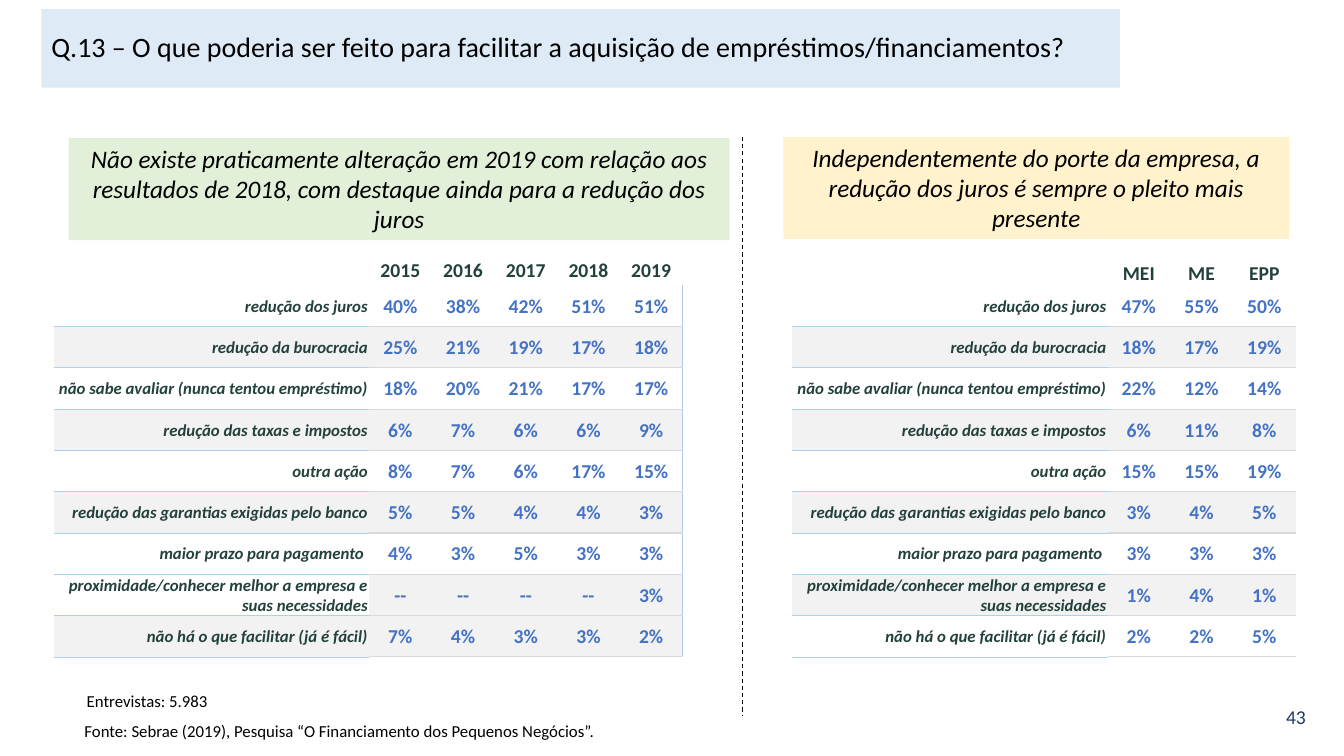
import pptx
import pptx.dml.color
import pptx.enum.dml
import pptx.enum.shapes
import pptx.enum.text
import pptx.oxml
import pptx.oxml.ns
import pptx.util

Cm, Pt = pptx.util.Cm, pptx.util.Pt
ALIGN = pptx.enum.text.PP_ALIGN
ANCHOR = pptx.enum.text.MSO_ANCHOR
AUTO_SIZE = pptx.enum.text.MSO_AUTO_SIZE

NO_GRID_STYLE = "{2D5ABB26-0587-4C30-8999-92F81FD0307C}"
BLUE_RULE, GREY_RULE, EDGE_RULE = ("A8D2F2", 0.75), ("D9D9D9", 1), ("B4C7E7", 0.75)
# Row fills: "." none, "G" grey, "W" white
FILLS = {".": None, "G": "F2F2F2", "W": "FFFFFF"}

TABLE_TOP, HEADER_HEIGHT, ROW_HEIGHT = 7.19, 1.55, 1.04
LABEL_WIDTH, VALUE_WIDTH = 7.95, 1.58

LABEL_FONT = {"size": Pt(12), "bold": True, "italic": True}
VALUE_FONT = {"size": Pt(14), "bold": True}
CALLOUT_FONT = {"size": Pt(18), "italic": True}
NOTE_FONT = {"size": Pt(12)}

ACTIONS = [
    "redução dos juros",
    "redução da burocracia",
    "não sabe avaliar (nunca tentou empréstimo)",
    "redução das taxas e impostos",
    "outra ação",
    "redução das garantias exigidas pelo banco",
    "maior prazo para pagamento ",
    "proximidade/conhecer melhor a empresa e suas necessidades",
    "não há o que facilitar (já é fácil)",
]
YEARS = ["2015", "2016", "2017", "2018", "2019"]
YEAR_VALUES = [
    ["40%", "38%", "42%", "51%", "51%"],
    ["25%", "21%", "19%", "17%", "18%"],
    ["18%", "20%", "21%", "17%", "17%"],
    ["6%", "7%", "6%", "6%", "9%"],
    ["8%", "7%", "6%", "17%", "15%"],
    ["5%", "5%", "4%", "4%", "3%"],
    ["4%", "3%", "5%", "3%", "3%"],
    ["--", "--", "--", "--", "3%"],
    ["7%", "4%", "3%", "3%", "2%"],
]
COMPANY_SIZES = ["MEI", "ME", "EPP"]
SIZE_VALUES = [
    ["47%", "55%", "50%"],
    ["18%", "17%", "19%"],
    ["22%", "12%", "14%"],
    ["6%", "11%", "8%"],
    ["15%", "15%", "19%"],
    ["3%", "4%", "5%"],
    ["3%", "3%", "3%"],
    ["1%", "4%", "1%"],
    ["2%", "2%", "5%"],
]


def color(hex_value):
    return pptx.dml.color.RGBColor.from_string(hex_value)


def set_attributes(target, values):
    for name, value in values.items():
        setattr(target, name, value)


def write(text_frame, text, font, hex_value="000000", alignment=ALIGN.LEFT):
    text_frame.text = text
    paragraph = text_frame.paragraphs[0]
    paragraph.alignment = alignment
    run_font = paragraph.runs[0].font
    set_attributes(run_font, {"name": "Calibri", **font})
    run_font.color.rgb = color(hex_value)
    return paragraph


def set_fill(fill, hex_value):
    if hex_value is None:
        fill.background()
    else:
        fill.solid()
        fill.fore_color.rgb = color(hex_value)


def add_title(slide, text):
    title = slide.shapes.title
    set_attributes(title, {"left": Cm(1.04), "top": Cm(0.23),
                           "width": Cm(27.18), "height": Cm(1.98)})
    set_fill(title.fill, "DEEBF7")
    set_attributes(title.text_frame, {"vertical_anchor": ANCHOR.MIDDLE, "word_wrap": True,
                                      "auto_size": AUTO_SIZE.NONE})
    write(title.text_frame, text, {"size": Pt(20)}).line_spacing = 0.9


def add_note(slide, box, text, font=NOTE_FONT, hex_value="000000", alignment=ALIGN.LEFT):
    shape = slide.shapes.add_textbox(*map(Cm, box))
    shape.text_frame.word_wrap = True
    write(shape.text_frame, text, font, hex_value, alignment)


def add_callout(slide, box, text, fill):
    shape = slide.shapes.add_shape(pptx.enum.shapes.MSO_SHAPE.RECTANGLE, *map(Cm, box))
    shape.shadow.inherit = False
    set_fill(shape.fill, fill)
    shape.line.fill.background()
    set_attributes(shape.text_frame, {"vertical_anchor": ANCHOR.TOP, "word_wrap": True,
                                      "auto_size": AUTO_SIZE.SHAPE_TO_FIT_TEXT})
    write(shape.text_frame, text, CALLOUT_FONT, alignment=ALIGN.CENTER)


def add_divider(slide, x, top, bottom):
    connector = slide.shapes.add_connector(
        pptx.enum.shapes.MSO_CONNECTOR.STRAIGHT, Cm(x), Cm(top), Cm(x), Cm(bottom))
    connector.line.color.rgb = color("000000")
    set_attributes(connector.line, {"width": Pt(0.75),
                                    "dash_style": pptx.enum.dml.MSO_LINE.DASH})
    connector.element.spPr.append(pptx.oxml.parse_xml(
        f'<a:effectLst {pptx.oxml.ns.nsdecls("a")}/>'))


def add_border(cell, side, rule):
    hex_value, width = rule
    properties = cell.element.get_or_add_tcPr() if hasattr(cell, "element") \
        else cell._tc.get_or_add_tcPr()
    properties.append(pptx.oxml.parse_xml(
        f'<a:ln{side} {pptx.oxml.ns.nsdecls("a")} w="{Pt(width)}">'
        f'<a:solidFill><a:srgbClr val="{hex_value}"/></a:solidFill></a:ln{side}>'))


def add_grid(slide, left, top, column_width, row_height, rows, font, hex_value,
             alignment=ALIGN.CENTER, fills=".", rule=None, edge=None):
    columns = len(rows[0])
    frame = slide.shapes.add_table(len(rows), columns, Cm(left), Cm(top),
                                   Cm(column_width * columns), Cm(row_height * len(rows)))
    frame.element.find(".//" + pptx.oxml.ns.qn("a:tableStyleId")).text = NO_GRID_STYLE
    table = frame.table
    set_attributes(table, {"first_row": False, "horz_banding": False})
    for column in table.columns:
        column.width = Cm(column_width)
    for row_index, texts in enumerate(rows):
        table.rows[row_index].height = Cm(row_height)
        for column_index, text in enumerate(texts):
            cell = table.cell(row_index, column_index)
            set_attributes(cell, {"margin_left": Cm(0.03), "margin_right": Cm(0.03),
                                  "margin_top": Cm(0.03), "margin_bottom": 0,
                                  "vertical_anchor": ANCHOR.MIDDLE})
            write(cell.text_frame, text, font, hex_value, alignment)
            # Borders come before the fill in the cell properties
            if edge and column_index == columns - 1:
                add_border(cell, "R", edge)
            if rule and row_index:
                add_border(cell, "T", rule)
            if rule:
                add_border(cell, "B", rule)
            set_fill(cell.fill, FILLS[fills[row_index]])


def add_panel(slide, left, header_top, headers, values, label_fills, value_fills, edge=None):
    values_left = left + LABEL_WIDTH
    add_grid(slide, left, TABLE_TOP, LABEL_WIDTH, ROW_HEIGHT, [[action] for action in ACTIONS],
             LABEL_FONT, "23413B", ALIGN.RIGHT, label_fills, BLUE_RULE)
    add_grid(slide, values_left, header_top, VALUE_WIDTH, HEADER_HEIGHT, [headers],
             VALUE_FONT, "23413B")
    add_grid(slide, values_left, TABLE_TOP, VALUE_WIDTH, ROW_HEIGHT, values,
             VALUE_FONT, "4472C4", fills=value_fills, rule=GREY_RULE, edge=edge)


def main():
    presentation = pptx.Presentation()
    set_attributes(presentation, {"slide_width": Cm(33.87), "slide_height": Cm(19.05)})
    slide = presentation.slides.add_slide(presentation.slide_layouts[5])

    # Title, page number and notes
    add_title(slide, "Q.13 – O que poderia ser feito para facilitar a aquisição de "
                     "empréstimos/financiamentos?")
    add_note(slide, (32.16, 17.65, 1.5, 1.02), "43", {"size": Pt(14)}, "203864")
    add_note(slide, (1.88, 18.03, 17.15, 0.76),
             "Fonte: Sebrae (2019), Pesquisa “O Financiamento dos Pequenos Negócios”.")
    add_note(slide, (1.14, 17.27, 4.34, 0.76), "Entrevistas: 5.983", alignment=ALIGN.RIGHT)

    # Divider and key messages
    add_divider(slide, 18.72, 3.45, 18.03)
    add_callout(slide, (19.74, 3.45, 12.75, 2.57),
                "Independentemente do porte da empresa, a redução dos juros é sempre "
                "o pleito mais presente", "FFF2CC")
    add_callout(slide, (1.73, 3.48, 16.66, 2.57),
                "Não existe praticamente alteração em 2019 com relação aos resultados de 2018, "
                "com destaque ainda para a redução dos juros", "E2F0D9")

    # Results by year and by company size
    add_panel(slide, 1.35, 6.02, YEARS, YEAR_VALUES, ".G.GWGWWG", ".G.GWG.GG", EDGE_RULE)
    add_panel(slide, 19.96, 6.12, COMPANY_SIZES, SIZE_VALUES, ".G.GWGWGW", ".G.GWG.GW")

    presentation.save("out.pptx")


if __name__ == "__main__":
    main()
